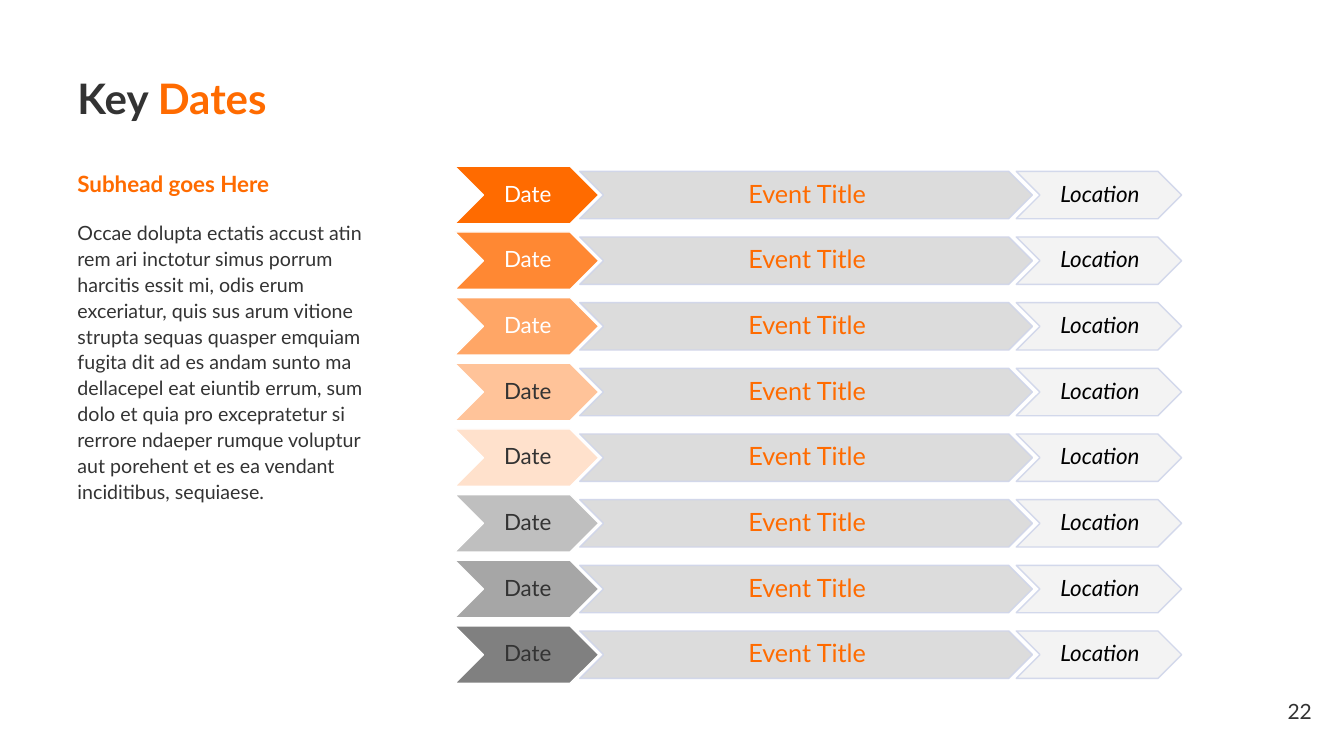
from lxml import etree
from pptx import Presentation
from pptx.dml.color import RGBColor
from pptx.enum.shapes import MSO_SHAPE as Shape
from pptx.enum.text import MSO_ANCHOR as Anchor, PP_ALIGN as Align
from pptx.oxml.ns import qn
from pptx.util import Inches, Pt

ORANGE, DARK, WHITE, BLACK = "FF6B00", "333333", "FFFFFF", "000000"


def paint(color_format, color, opacity=100):
    color_format.rgb = RGBColor.from_string(color)
    if opacity < 100:
        # python-pptx has no public transparency setting
        for srgb in color_format._xFill.iter(qn("a:srgbClr")):
            etree.SubElement(srgb, qn("a:alpha")).set("val", str(opacity * 1000))


def write(frame, runs, size, spacing=1.0, align=Align.LEFT, anchor=Anchor.TOP,
          bold=False, italic=False):
    """Fill a text frame with one paragraph made of (text, color) runs."""
    frame.word_wrap = True
    frame.vertical_anchor = anchor
    paragraph = frame.paragraphs[0]
    paragraph.alignment = align
    paragraph.line_spacing = spacing
    font = paragraph.font
    font.name, font.size, font.bold, font.italic = "Lato", Pt(size), bold, italic
    for text, color in runs:
        run = paragraph.add_run()
        run.text = text
        paint(run.font.color, color)


deck = Presentation()
deck.slide_width, deck.slide_height = Inches(13.33), Inches(7.5)
slide = deck.slides.add_slide(deck.slide_layouts[6])

body = (
    "Occae dolupta ectatis accust atin rem ari inctotur simus porrum harcitis "
    "essit mi, odis erum exceriatur, quis sus arum vitione strupta sequas quasper "
    "emquiam fugita dit ad es andam sunto ma dellacepel eat eiuntib errum, sum "
    "dolo et quia pro excepratetur si rerrore ndaeper rumque voluptur aut porehent "
    "et es ea vendant inciditibus, sequiaese."
)

# Title, left column and page number: left, top, width, height, runs, style
margin = 0.67
texts = [
    (margin, 0.56, 3.99, 0.89, [("Key ", DARK), ("Dates", ORANGE)],
     dict(size=30, spacing=0.9, anchor=Anchor.MIDDLE, bold=True)),
    (margin, 1.67, 3.37, 0.42, [("Subhead goes Here", ORANGE)],
     dict(size=16, spacing=0.9, bold=True)),
    (margin, 2.12, 3.18, 4.08, [(body, DARK)], dict(size=14, spacing=1.1)),
    (12.22, 6.88, 0.89, 0.35, [("22", DARK)], dict(size=15, align=Align.RIGHT)),
]
for left, top, width, height, runs, style in texts:
    box = slide.shapes.add_textbox(*map(Inches, (left, top, width, height)))
    write(box.text_frame, runs, **style)

# Timetable: one row per date, three chevrons centred on each row
first_center, row_pitch = 1.935, 4.56 / 7
date_colors = [
    (ORANGE, WHITE), ("FF8833", WHITE), ("FFA666", WHITE), ("FFC399", DARK),
    ("FFE1CC", DARK), ("BFBFBF", DARK), ("A6A6A6", DARK), ("808080", DARK),
]
for row, (date_fill, date_text) in enumerate(date_colors):
    center = first_center + row * row_pitch
    # left, width, height, fill, outline, opacity, label, text color, size, italic
    columns = [
        (4.51, 1.43, 0.57, date_fill, WHITE, 100, "Date", date_text, 16, False),
        (5.75, 4.49, 0.47, "D9D9D9", "CFD5EA", 90, "Event Title", ORANGE, 18, False),
        (10.08, 1.64, 0.47, "F2F2F2", "CFD5EA", 90, "Location", BLACK, 16, True),
    ]
    for left, width, height, fill, outline, opacity, label, color, size, italic in columns:
        chevron = slide.shapes.add_shape(
            Shape.CHEVRON, Inches(left), Inches(center - height / 2),
            Inches(width), Inches(height))
        chevron.shadow.inherit = False
        chevron.fill.solid()
        paint(chevron.fill.fore_color, fill, opacity)
        chevron.line.width = Pt(1)
        paint(chevron.line.color, outline, opacity)
        frame = chevron.text_frame
        frame.margin_left, frame.margin_right = Inches(0.02), 0
        frame.margin_top = frame.margin_bottom = Inches(0.01)
        write(frame, [(label, color)], size, spacing=0.9, align=Align.CENTER,
              anchor=Anchor.MIDDLE, italic=italic)

deck.save("out.pptx")
